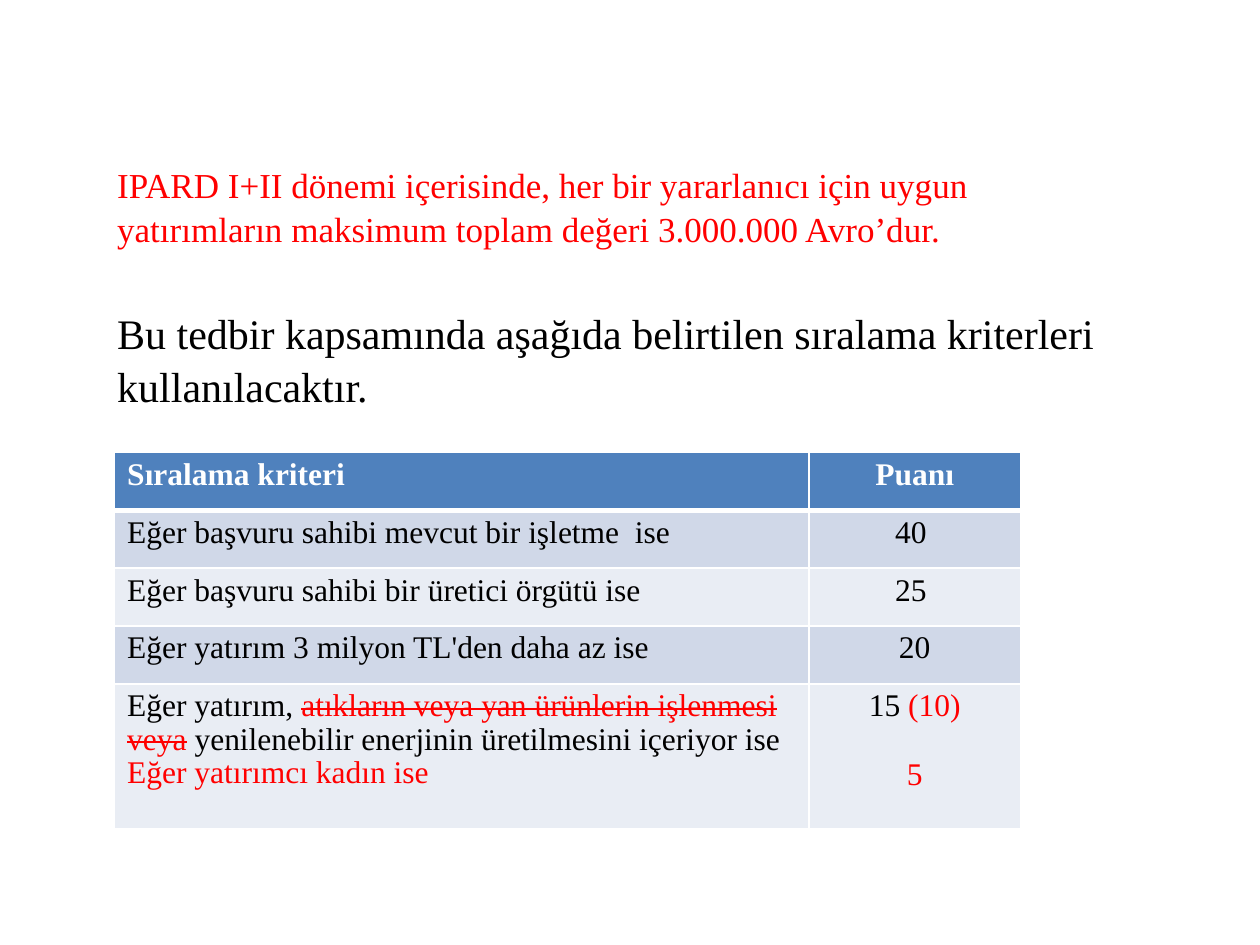
from lxml import etree
from pptx import Presentation
from pptx.dml.color import RGBColor
from pptx.enum.text import MSO_ANCHOR, MSO_AUTO_SIZE, PP_ALIGN
from pptx.oxml.ns import qn
from pptx.util import Inches, Pt

CENTER, LEFT = PP_ALIGN.CENTER, PP_ALIGN.LEFT
TOP, NO_FIT = MSO_ANCHOR.TOP, MSO_AUTO_SIZE.NONE
FONT = "Times New Roman"
RED = RGBColor(0xFF, 0x00, 0x00)
BLACK = RGBColor(0x00, 0x00, 0x00)
WHITE = RGBColor(0xFF, 0xFF, 0xFF)
HEADER_BLUE = RGBColor(0x4F, 0x81, 0xBD)
BANDS = (RGBColor(0xD0, 0xD8, 0xE8), RGBColor(0xE9, 0xED, 0xF4))

INTRO = [
    ("IPARD I+II dönemi içerisinde, her bir yararlanıcı için uygun yatırımların "
     "maksimum toplam değeri 3.000.000 Avro’dur.", 20, RED, 0),
    ("Bu tedbir kapsamında aşağıda belirtilen sıralama kriterleri kullanılacaktır.",
     24, BLACK, 32),
]
CRITERIA = [
    ("Sıralama kriteri", "Puanı"),
    ("Eğer başvuru sahibi mevcut bir işletme  ise", "40 "),
    ("Eğer başvuru sahibi bir üretici örgütü ise", "25 "),
    ("Eğer yatırım 3 milyon TL'den daha az ise", "20"),
]
LAST_CRITERION = [
    [("Eğer yatırım, ", BLACK, False),
     ("atıkların veya yan ürünlerin işlenmesi veya", RED, True),
     (" yenilenebilir enerjinin üretilmesini içeriyor ise", BLACK, False)],
    [("Eğer yatırımcı kadın ise", RED, False)],
]
LAST_SCORE = [
    [("15 ", BLACK, False), ("(10)", RED, False)],
    [("5", RED, False)],
]


def add_intro(page, left, top, width, height):
    """Place the two introductory statements in the body placeholder."""
    page.shapes.title.element.getparent().remove(page.shapes.title.element)
    body = page.placeholders[1]
    body.left, body.top, body.width, body.height = left, top, width, height
    frame = body.text_frame
    frame.word_wrap, frame.auto_size, frame.vertical_anchor = True, NO_FIT, TOP
    for index, (text, size, color, gap) in enumerate(INTRO):
        para = frame.paragraphs[0] if index == 0 else frame.add_paragraph()
        para.text = text
        para.font.name, para.font.size = FONT, Pt(size)
        para.font.color.rgb = color
        para.space_before, para.line_spacing = Pt(gap), 1.05
        props = para._p.get_or_add_pPr()
        props.set("marL", "0")
        props.set("indent", "0")
        etree.SubElement(props, qn("a:buNone"))
        props.insert_element_before(props.find(qn("a:buNone")), "a:defRPr")


def set_borders(cell, bottom_width):
    """Draw white borders round a cell, with the given bottom width."""
    props = cell._tc.get_or_add_tcPr()
    widths = {"lnL": 1, "lnR": 1, "lnT": 1, "lnB": bottom_width}
    for position, (side, width) in enumerate(widths.items()):
        line = etree.Element(qn(f"a:{side}"), w=str(Pt(width)))
        fill = etree.SubElement(line, qn("a:solidFill"))
        etree.SubElement(fill, qn("a:srgbClr"), val=str(WHITE))
        props.insert(position, line)


def fill_cell(cell, paragraphs, align, color, bold=False, gap=0):
    """Write paragraphs of (text, colour, struck) spans into a filled cell."""
    cell.fill.solid()
    cell.fill.fore_color.rgb = color
    frame = cell.text_frame
    for index, spans in enumerate(paragraphs):
        para = frame.paragraphs[0] if index == 0 else frame.add_paragraph()
        para.alignment, para.line_spacing = align, 0.95
        para.space_before = Pt(gap if index else 0)
        para.font.name, para.font.size, para.font.bold = FONT, Pt(18), bold
        for text, span_color, struck in spans:
            span = para.add_run()
            span.text = text
            span.font.name, span.font.size, span.font.bold = FONT, Pt(18), bold
            span.font.color.rgb = span_color
            if struck:
                span.font._element.set("strike", "sngStrike")


def add_criteria_table(page, left, top, width, height):
    """Place the table of ranking criteria and their scores."""
    row_count = len(CRITERIA) + 1
    table = page.shapes.add_table(row_count, 2, left, top, width, height).table
    score_width, row_height = Inches(1.68), Inches(0.46)
    table.columns[0].width = width - score_width
    table.columns[1].width = score_width
    for row in table.rows:
        row.height = row_height
    table.rows[row_count - 1].height = height - row_height * len(CRITERIA)

    for index, texts in enumerate(CRITERIA):
        header = index == 0
        fill = HEADER_BLUE if header else BANDS[(index - 1) % 2]
        for column, (text, align) in enumerate(zip(texts, (LEFT, CENTER))):
            spans = [(text, WHITE if header else BLACK, False)]
            fill_cell(table.cell(index, column), [spans], align, fill, header)
    last = row_count - 1
    fill_cell(table.cell(last, 0), LAST_CRITERION, LEFT, BANDS[1])
    fill_cell(table.cell(last, 1), LAST_SCORE, CENTER, BANDS[1], gap=20)
    for index in range(row_count):
        for column in range(2):
            set_borders(table.cell(index, column), 3 if index == 0 else 1)
            if index == 1:
                top_line = table.cell(index, column)._tc.tcPr.find(qn("a:lnT"))
                top_line.set("w", str(Pt(3)))


def main():
    """Build and save the deck."""
    deck = Presentation()
    deck.slide_width, deck.slide_height = Inches(10), Inches(7.5)
    page = deck.slides.add_slide(deck.slide_layouts[1])
    add_intro(page, Inches(0.83), Inches(1.23), Inches(8.02), Inches(5.47))
    add_criteria_table(page, Inches(0.91), Inches(3.59), Inches(7.19), Inches(2.99))
    deck.save("out.pptx")


if __name__ == "__main__":
    main()
